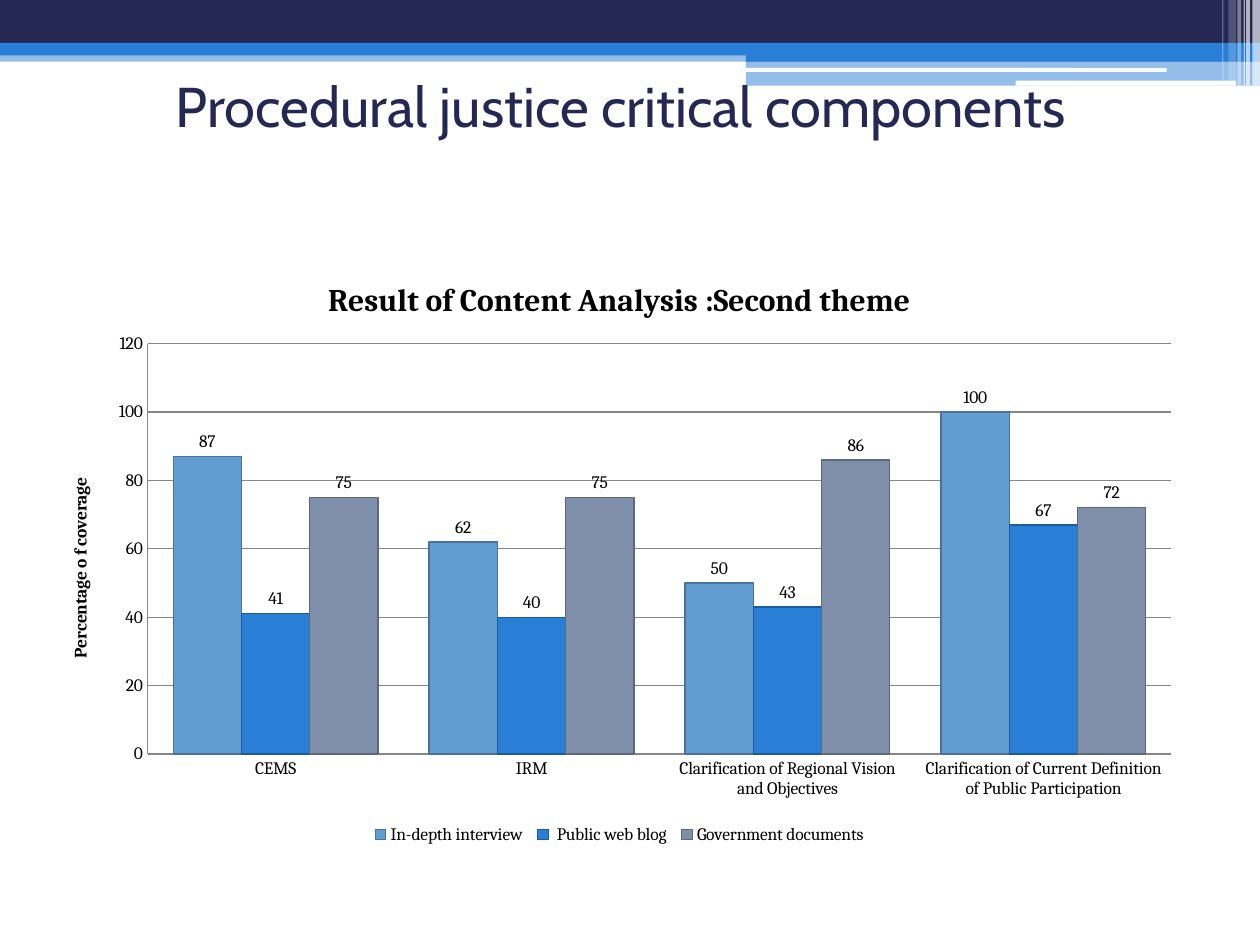
from lxml.etree import SubElement
from pptx import Presentation
from pptx.chart.data import CategoryChartData
from pptx.dml.color import RGBColor
from pptx.enum.chart import XL_CHART_TYPE as ChartType
from pptx.enum.chart import XL_LABEL_POSITION as LabelPosition
from pptx.enum.chart import XL_LEGEND_POSITION as LegendPosition
from pptx.enum.chart import XL_TICK_MARK as TickMark
from pptx.enum.shapes import MSO_SHAPE as ShapeType
from pptx.enum.text import MSO_ANCHOR as Anchor
from pptx.enum.text import PP_ALIGN as Align
from pptx.oxml.ns import qn
from pptx.util import Inches, Pt

COLUMNS, ROWS = 1000, 750
WIDTH, HEIGHT = Inches(10), Inches(7.5)

NAVY, BLUE, SKY, SLATE = "242852", "297FD5", "629DD1", "7F8FA9"
WHITE, BLACK, GRAY = "FFFFFF", "000000", "868686"

HEADER_BOX = (0, 0, 1000, 68)
TITLE_BOX = (43, 52, 900, 117)
CHART_BOX = (35, 202, 913, 472)

HEADER_BARS = [
    ((0, 40, 1000, 9), BLUE, 50),
    ((0, 0, 1000, 34), NAVY, 100),
    ((0, 34, 1000, 10), BLUE, 100),
    ((592, 39, 408, 10), BLUE, 100),
    ((592, 48, 408, 20), BLUE, 50),
]
HEADER_SLITS = [(591, 54, 335, 3), (806, 64, 175, 4)]
HEADER_STRIPES = [
    (994, 6, 68, 65),
    (989, 3, 68, 65),
    (987, 1, 68, 60),
    (982, 3, 68, 40),
    (975, 6, 64, 20),
    (970, 1, 64, 30),
]

CATEGORIES = [
    "CEMS",
    "IRM",
    "Clarification of Regional Vision and Objectives",
    "Clarification of Current Definition of Public Participation",
]
SERIES = [
    ("In-depth interview ", (87, 62, 50, 100), SKY, "48739A"),
    (" Public web blog ", (41, 40, 43, 67), BLUE, "1D5C9C"),
    ("Government documents", (75, 75, 86, 72), SLATE, "5C697D"),
]
PLOT_SHARES = {"x": 0.09, "y": 0.15, "w": 0.89, "h": 0.69}


def color(value):
    return RGBColor.from_string(value)


def apply(target, values):
    for name, value in values.items():
        setattr(target, name, value)


def style_font(font, values, fill):
    apply(font, values)
    font.color.rgb = color(fill)


def place(box, left=0, top=0, width=None, height=None):
    width = box[2] if width is None else width
    height = box[3] if height is None else height
    return (
        WIDTH * (box[0] + left) // COLUMNS,
        HEIGHT * (box[1] + top) // ROWS,
        WIDTH * width // COLUMNS,
        HEIGHT * height // ROWS,
    )


def add_bar(slide, position, fill, opacity=100, kind=ShapeType.RECTANGLE):
    shape = slide.shapes.add_shape(kind, *position)
    shape.shadow.inherit = False
    shape.line.fill.background()
    shape.fill.solid()
    shape.fill.fore_color.rgb = color(fill)
    if opacity < 100:
        solid = shape.fill._xPr.find(qn("a:solidFill"))
        SubElement(solid[0], qn("a:alpha"), val=str(opacity * 1000))


def add_header(slide, box):
    for cells, fill, opacity in HEADER_BARS:
        add_bar(slide, place(box, *cells), fill, opacity)
    for cells in HEADER_SLITS:
        add_bar(slide, place(box, *cells), WHITE, kind=ShapeType.ROUNDED_RECTANGLE)
    for left, width, height, opacity in HEADER_STRIPES:
        add_bar(slide, place(box, left, 0, width, height), WHITE, opacity)


def add_title(slide, box):
    frame = slide.shapes.add_textbox(*place(box)).text_frame
    apply(frame, {"word_wrap": True, "vertical_anchor": Anchor.TOP})
    paragraph = frame.paragraphs[0]
    apply(paragraph, {"text": "Procedural justice critical components", "alignment": Align.CENTER})
    style_font(paragraph.font, {"name": "Cabin", "size": Pt(32)}, NAVY)


def set_chart_text(frame, text, size):
    frame.text = text
    style_font(
        frame.paragraphs[0].runs[0].font,
        {"name": "Cambria", "size": Pt(size), "bold": True},
        BLACK,
    )


def style_line(line, fill, width=0.75):
    line.color.rgb = color(fill)
    line.width = Pt(width)


def set_plot_layout(chart, shares):
    area = chart._chartSpace.chart.plotArea
    for old in area.findall(qn("c:layout")):
        area.remove(old)
    layout = SubElement(area, qn("c:layout"))
    area.insert(0, layout)
    manual = SubElement(layout, qn("c:manualLayout"))
    settings = {"layoutTarget": "inner", "xMode": "edge", "yMode": "edge", **shares}
    for name, value in settings.items():
        SubElement(manual, qn(f"c:{name}"), val=str(value))


def style_axes(chart):
    for axis in (chart.category_axis, chart.value_axis):
        apply(axis, {"major_tick_mark": TickMark.NONE, "minor_tick_mark": TickMark.NONE})
        style_line(axis.format.line, GRAY)
    axis = chart.value_axis
    apply(axis, {
        "minimum_scale": 0,
        "maximum_scale": 120,
        "major_unit": 20,
        "has_major_gridlines": True,
    })
    style_line(axis.major_gridlines.format.line, GRAY)
    set_chart_text(axis.axis_title.text_frame, "Percentage o f coverage ", 10)


def style_series(plot):
    apply(plot, {"gap_width": 75, "overlap": 0, "vary_by_categories": False})
    for series, (_, _, fill, outline) in zip(plot.series, SERIES):
        series.format.fill.solid()
        series.format.fill.fore_color.rgb = color(fill)
        style_line(series.format.line, outline)
        apply(series.data_labels, {
            "show_value": True,
            "position": LabelPosition.OUTSIDE_END,
        })


def add_coverage_chart(slide, box):
    data = CategoryChartData()
    data.categories = CATEGORIES
    for name, values, _, _ in SERIES:
        data.add_series(name, values)
    chart = slide.shapes.add_chart(ChartType.COLUMN_CLUSTERED, *place(box), data).chart
    style_font(chart.font, {"name": "Cambria", "size": Pt(10)}, BLACK)
    apply(chart, {"has_title": True, "has_legend": True})
    set_chart_text(chart.chart_title.text_frame, "Result of Content Analysis :Second theme", 18)
    apply(chart.legend, {"position": LegendPosition.BOTTOM, "include_in_layout": False})
    style_axes(chart)
    style_series(chart.plots[0])
    set_plot_layout(chart, PLOT_SHARES)


def main():
    presentation = Presentation()
    apply(presentation, {"slide_width": WIDTH, "slide_height": HEIGHT})
    slide = presentation.slides.add_slide(presentation.slide_layouts[6])
    add_header(slide, HEADER_BOX)
    add_title(slide, TITLE_BOX)
    add_coverage_chart(slide, CHART_BOX)
    presentation.save("out.pptx")


if __name__ == "__main__":
    main()
